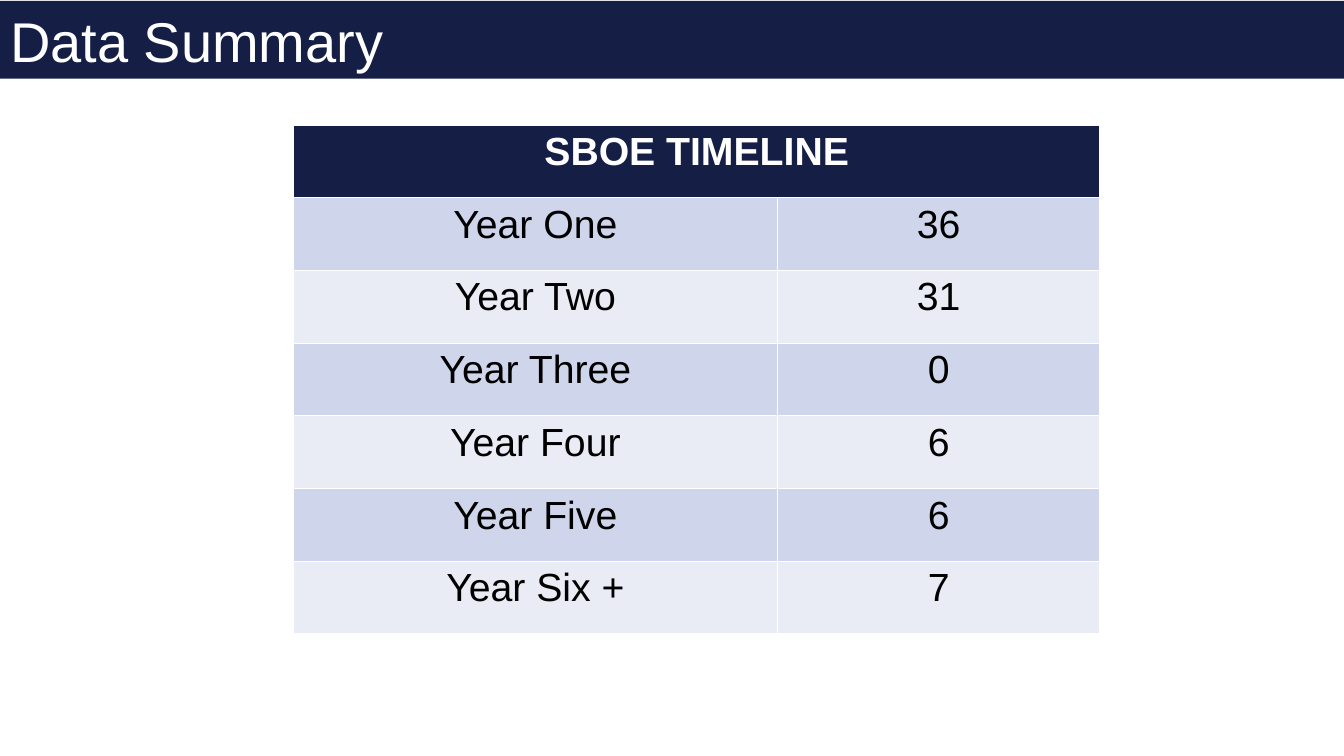
from pptx import Presentation
from pptx import util as u
from pptx.dml.color import RGBColor
from pptx.enum import text as t

NAVY = RGBColor(0x15, 0x1F, 0x46)
WHITE = RGBColor(0xFF, 0xFF, 0xFF)
BLACK = RGBColor(0, 0, 0)
BANDS = RGBColor(0xCF, 0xD5, 0xEA), RGBColor(0xE9, 0xEB, 0xF5)
FONT = "Arial"
WIDE, HIGH = u.Inches(13.33), u.Inches(7.5)
HEAD = "SBOE TIMELINE"
YEARS = [
    ("Year One", "36"),
    ("Year Two", "31"),
    ("Year Three", "0"),
    ("Year Four", "6"),
    ("Year Five", "6"),
    ("Year Six +", "7"),
]


def style(frame, size, color, align, bold=False):
    para = frame.paragraphs[0]
    para.alignment = align
    for run in para.runs:
        font = run.font
        font.name, font.size, font.bold = FONT, u.Pt(size), bold
        font.color.rgb = color


def add_title(slide, box, words):
    title = slide.shapes.title
    title.left, title.top, title.width, title.height = box
    title.fill.solid()
    title.fill.fore_color.rgb = NAVY
    frame = title.text_frame
    frame.text = words
    frame.auto_size = t.MSO_AUTO_SIZE.NONE
    frame.vertical_anchor = t.MSO_ANCHOR.MIDDLE
    style(frame, 40, WHITE, t.PP_ALIGN.LEFT)


def fill_cell(cell, words, fill, color, bold=False):
    cell.fill.solid()
    cell.fill.fore_color.rgb = fill
    cell.text = words
    style(cell.text_frame, 28, color, t.PP_ALIGN.CENTER, bold)


def add_years(slide, box):
    table = slide.shapes.add_table(len(YEARS) + 1, 2, *box).table
    for col, share in zip(table.columns, (0.6, 0.4)):
        col.width = int(box[2] * share)
    table.cell(0, 0).merge(table.cell(0, 1))
    fill_cell(table.cell(0, 0), HEAD, NAVY, WHITE, True)
    for row, pair in enumerate(YEARS, 1):
        for col, words in enumerate(pair):
            fill_cell(table.cell(row, col), words, BANDS[(row - 1) % 2], BLACK)


def main():
    deck = Presentation()
    deck.slide_width, deck.slide_height = WIDE, HIGH
    slide = deck.slides.add_slide(deck.slide_layouts[5])
    add_title(slide, (0, u.Inches(0.01), WIDE, u.Inches(0.77)), "Data Summary")
    add_years(slide, [u.Inches(n) for n in (2.91, 1.24, 8, 5.05)])
    deck.save("out.pptx")


if __name__ == "__main__":
    main()
